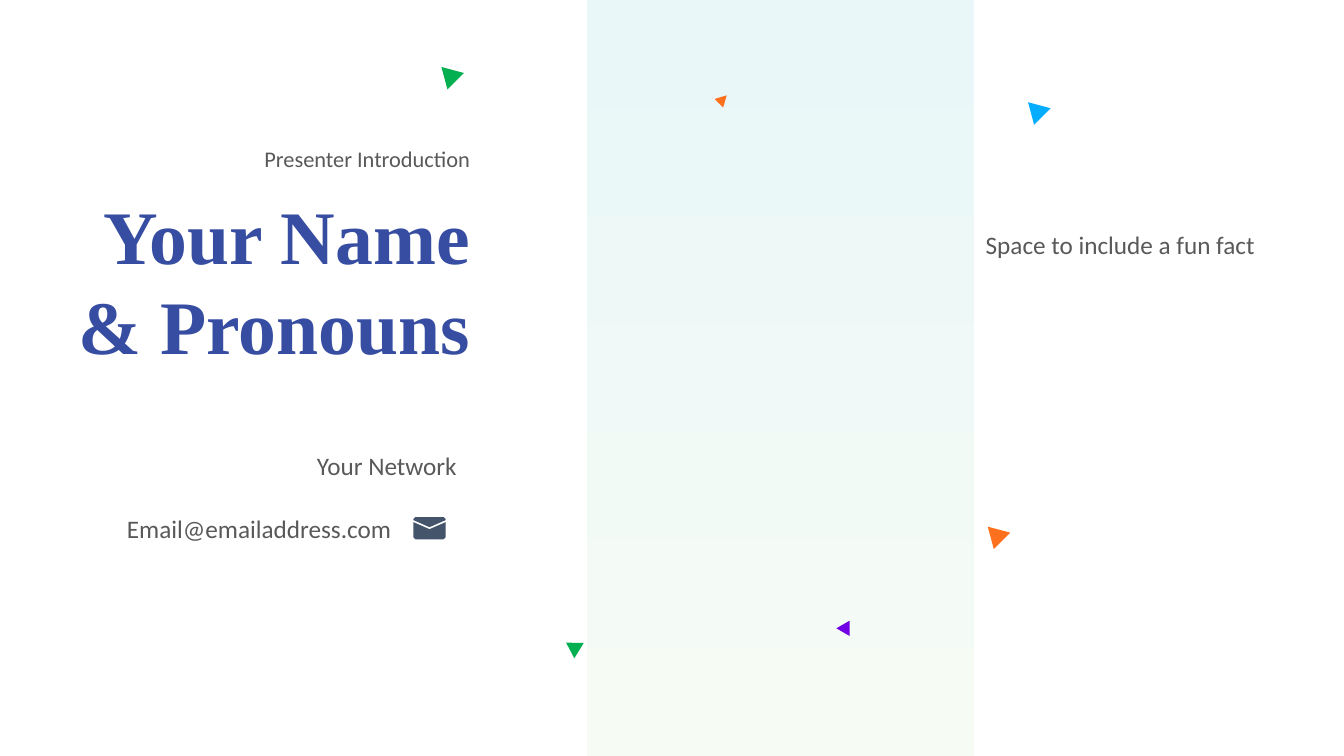
"""Build a presenter introduction slide with contact details and confetti triangles."""
from pptx import Presentation
from pptx.dml.color import RGBColor
from pptx.enum.shapes import MSO_SHAPE as Shape
from pptx.enum.text import MSO_ANCHOR as Anchor, MSO_AUTO_SIZE as AutoSize, PP_ALIGN as Align
from pptx.util import Inches, Pt

GREY = RGBColor(0x59, 0x59, 0x59)
SLATE = RGBColor(0x44, 0x54, 0x6A)
NAVY = RGBColor(0x36, 0x4D, 0xA1)
PALE_BLUE = RGBColor(0xE9, 0xF7, 0xF9)
PALE_GREEN = RGBColor(0xF6, 0xFB, 0xF4)
BLUE = RGBColor(0x05, 0xAD, 0xFF)
ORANGE = RGBColor(0xFD, 0x71, 0x1E)
PURPLE = RGBColor(0x70, 0x00, 0xE3)
GREEN = RGBColor(0x03, 0xAF, 0x50)

presentation = Presentation()
presentation.slide_width = Inches(13.33)
presentation.slide_height = Inches(7.5)
slide = presentation.slides.add_slide(presentation.slide_layouts[5])
shapes = slide.shapes


def area(left, top, width, height):
    """Turn percentages of the slide's size into lengths."""
    column, row = presentation.slide_width / 100, presentation.slide_height / 100
    return [round(length) for length in (left * column, top * row, width * column, height * row)]


def write(frame, lines, size, color, font_name, align, spacing, bold=False):
    """Fill a text frame with equally formatted paragraphs."""
    frame.text = "\n".join(lines)
    for paragraph in frame.paragraphs:
        paragraph.alignment = align
        paragraph.line_spacing = spacing
        font = paragraph.font
        font.name, font.size, font.bold = font_name, Pt(size), bold
        font.color.rgb = color


band = shapes.add_shape(Shape.RECTANGLE, *area(43.65, 0, 28.8, 100))
band.shadow.inherit = False
band.line.fill.background()
band.fill.gradient()
band.fill.gradient_angle = 270
for stop, color, position in zip(band.fill.gradient_stops, (PALE_BLUE, PALE_GREEN), (0, 1)):
    stop.color.rgb = color
    stop.position = position

triangles = [
    (76.58, 13.33, 1.73, 2.67, 75, BLUE),
    (53.33, 12.4, 0.9, 1.47, 45, ORANGE),
    (62.4, 82, 1.13, 1.73, 30.2, PURPLE),
    (41.93, 84.53, 1.35, 2, 301.5, GREEN),
    (73.58, 69.47, 1.73, 2.67, 75, ORANGE),
    (32.93, 8.67, 1.73, 2.67, 75, GREEN),
]
for left, top, width, height, rotation, color in triangles:
    triangle = shapes.add_shape(Shape.ISOSCELES_TRIANGLE, *area(left, top, width, height))
    triangle.rotation = rotation
    triangle.shadow.inherit = False
    triangle.line.fill.background()
    triangle.fill.solid()
    triangle.fill.fore_color.rgb = color

title = shapes.title
title.left, title.top, title.width, title.height = area(4.21, 24.27, 31.5, 25.6)
title.text_frame.auto_size = AutoSize.NONE
title.text_frame.word_wrap = False
title.text_frame.vertical_anchor = Anchor.TOP
write(title.text_frame, ["Your Name", "& Pronouns"], 54, NAVY, "Times New Roman",
      Align.RIGHT, 1, bold=True)

labels = [
    ("Presenter Introduction", (18.68, 18.53, 17.03, 4.93), 16, Align.RIGHT, 1, False),
    ("Your Network", (7.28, 58.93, 27.45, 5.33), 18, Align.RIGHT, 1, True),
    ("Email@emailaddress.com", (8.4, 67.2, 21.45, 5.33), 18, Align.RIGHT, 1, True),
    ("Space to include a fun fact", (72.6, 27.73, 25.35, 6.8), 18, Align.LEFT, 1.5, True),
]
for text, place, size, align, spacing, wrap in labels:
    label = shapes.add_textbox(*area(*place))
    label.text_frame.word_wrap = wrap
    write(label.text_frame, [text], size, GREY, "Calibri", align, spacing)

body = [(410, 518), (426, 525), (442, 518), (442, 533), (440, 535), (412, 535), (410, 533)]
flap = [(412, 513), (440, 513), (442, 515), (442, 516), (426, 523), (410, 516), (410, 515)]
builder = shapes.build_freeform(*body[0], scale=presentation.slide_width / 1333)
builder.add_line_segments(body[1:], close=True)
builder.move_to(*flap[0])
builder.add_line_segments(flap[1:], close=True)
envelope = builder.convert_to_shape()
envelope.shadow.inherit = False
envelope.line.fill.background()
envelope.fill.solid()
envelope.fill.fore_color.rgb = SLATE

presentation.save("out.pptx")
